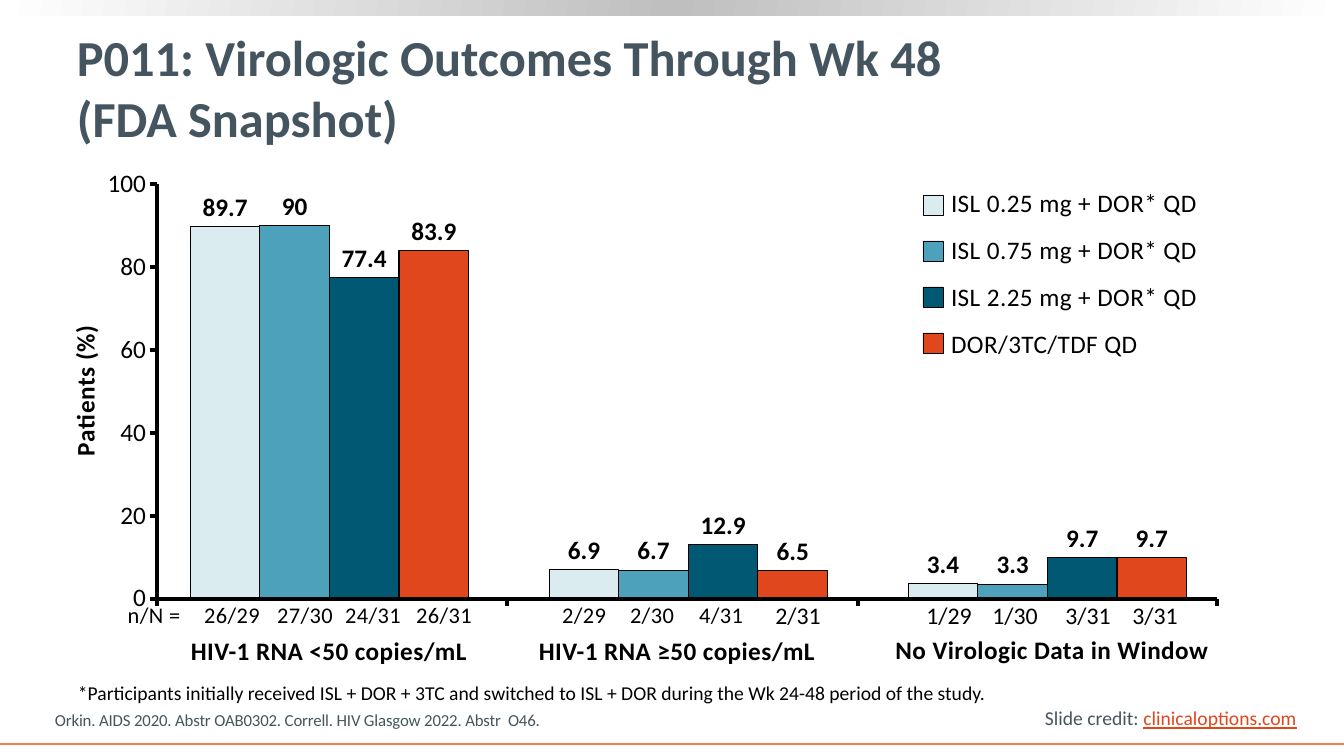
from copy import deepcopy

from lxml import etree
from pptx import Presentation
from pptx import util as u
from pptx.chart import data as chart_data
from pptx.dml import color
from pptx.enum import chart as chart_enum
from pptx.enum import shapes, text
from pptx.oxml import ns

PX = 9071
FONT = "Calibri"
BLACK, SLATE, ORANGE = "000000", "455560", "E1471D"
LEFT, CENTER = text.PP_ALIGN.LEFT, text.PP_ALIGN.CENTER
hex_color = color.RGBColor.from_string


def add_span(para, words, size, ink=BLACK, bold=False, spacing=0):
    span = para.add_run()
    span.text = words
    span.font.name = FONT
    span.font.size = u.Pt(size)
    span.font.bold = bold
    span.font.color.rgb = hex_color(ink)
    if spacing:
        span._r.get_or_add_rPr().set("spc", str(spacing))
    return span


def add_box(left, top, width, height, align=LEFT, inset=True):
    box = page.shapes.add_textbox(left * PX, top * PX, width * PX, height * PX)
    frame = box.text_frame
    frame.word_wrap = True
    if not inset:
        frame.margin_left = frame.margin_right = frame.margin_top = frame.margin_bottom = 0
    frame.paragraphs[0].alignment = align
    return frame


deck = Presentation()
deck.slide_width, deck.slide_height = 1344 * PX, 756 * PX
page = deck.slides.add_slide(deck.slide_layouts[6])

band = page.shapes.add_shape(shapes.MSO_SHAPE.RECTANGLE, 0, 0, 1344 * PX, 16 * PX)
band.shadow.inherit = False
band.line.fill.background()
band.fill.gradient()
band.fill.gradient_angle = 170
stop_list = band._element.spPr.find(".//" + ns.qn("a:gsLst"))
stop_list.append(deepcopy(stop_list[0]))
for stop, position, tone in zip(band.fill.gradient_stops, (0, 0.5, 1), ("FFFFFF", "BFBFBF", "FFFFFF")):
    stop.position = position
    stop.color.rgb = hex_color(tone)

outcomes = chart_data.CategoryChartData()
outcomes.categories = ["HIV-1 RNA <50 copies/mL", "HIV-1 RNA ≥50 copies/mL", "No Virologic Data in Window"]
arms = [
    ("ISL 0.25 mg + DOR* QD", "DBECF1", (89.7, 6.9, 3.4)),
    ("ISL 0.75 mg + DOR* QD", "4DA1BB", (90, 6.7, 3.3)),
    ("ISL 2.25 mg + DOR* QD", "015873", (77.4, 12.9, 9.7)),
    ("DOR/3TC/TDF QD", ORANGE, (83.9, 6.5, 9.7)),
]
for name, tone, values in arms:
    outcomes.add_series(name, values)

chart_left, chart_top, chart_width, chart_height = 63, 160, 1180, 460
chart = page.shapes.add_chart(
    chart_enum.XL_CHART_TYPE.COLUMN_CLUSTERED,
    chart_left * PX, chart_top * PX, chart_width * PX, chart_height * PX, outcomes,
).chart
chart.has_legend = False
chart.has_title = False
chart.font.name = FONT
chart.font.size = u.Pt(18)
chart.font.color.rgb = hex_color(BLACK)

plot = chart.plots[0]
plot.vary_by_categories = False
plot.gap_width = 116
plot.overlap = 0
plot.has_data_labels = True
labels = plot.data_labels
labels.show_value = True
labels.position = chart_enum.XL_LABEL_POSITION.OUTSIDE_END
labels.number_format = "General"
labels.number_format_is_linked = False
labels.font.name = FONT
labels.font.size = u.Pt(18)
labels.font.bold = True
labels.font.color.rgb = hex_color(BLACK)
for series, (name, tone, values) in zip(plot.series, arms):
    series.format.fill.solid()
    series.format.fill.fore_color.rgb = hex_color(tone)
    series.format.line.color.rgb = hex_color(BLACK)
    series.format.line.width = u.Pt(0.75)

for axis in (chart.category_axis, chart.value_axis):
    axis.has_major_gridlines = False
    axis.major_tick_mark = chart_enum.XL_TICK_MARK.NONE
    axis.minor_tick_mark = chart_enum.XL_TICK_MARK.NONE
    axis.format.line.fill.background()
chart.category_axis.tick_label_position = chart_enum.XL_TICK_LABEL_POSITION.NONE
percent_axis = chart.value_axis
percent_axis.minimum_scale, percent_axis.maximum_scale = 0, 100
percent_axis.major_unit = 20
percent_axis.tick_labels.number_format = "0"
percent_axis.tick_labels.number_format_is_linked = False
axis_title = percent_axis.axis_title.text_frame
add_span(axis_title.paragraphs[0], "Patients (%)", 18, bold=True, spacing=30)
axis_title._txBody.bodyPr.set("rot", "-5400000")
axis_title._txBody.bodyPr.set("vert", "horz")

plot_area = chart.element.find(".//" + ns.qn("c:plotArea"))
for unused in plot_area.findall(ns.qn("c:layout")):
    plot_area.remove(unused)
layout = etree.Element(ns.qn("c:layout"))
plot_area.insert(0, layout)
manual = etree.SubElement(layout, ns.qn("c:manualLayout"))
for tag, value in (
    ("layoutTarget", "inner"), ("xMode", "edge"), ("yMode", "edge"),
    ("x", (150 - chart_left) / chart_width), ("y", (184 - chart_top) / chart_height),
    ("w", 1077 / chart_width), ("h", 414 / chart_height),
):
    etree.SubElement(manual, ns.qn("c:" + tag)).set("val", str(value))

axis_x, base_y = 157, 599
lines = [
    (0, 744, 1344, 744, "F47D55", 1.5),
    (axis_x, base_y, 1217, base_y, BLACK, 2.25),
    (axis_x, base_y, axis_x, 184, BLACK, 2.25),
]
lines += [(150, base_y - 83 * step, axis_x, base_y - 83 * step, BLACK, 2.25) for step in range(6)]
lines += [(tick_x, base_y, tick_x, 606, BLACK, 2.25) for tick_x in (axis_x, 507, 858, 1217)]
for start_x, start_y, end_x, end_y, tone, weight in lines:
    line = page.shapes.add_connector(
        shapes.MSO_CONNECTOR.STRAIGHT, start_x * PX, start_y * PX, end_x * PX, end_y * PX)
    line.line.color.rgb = hex_color(tone)
    line.line.width = u.Pt(weight)
    etree.SubElement(line._element.spPr, ns.qn("a:effectLst"))

title = add_box(67, 26, 1199, 122)
title.vertical_anchor = text.MSO_ANCHOR.MIDDLE
heading = title.paragraphs[0]
add_span(heading, "P011: Virologic Outcomes Through Wk 48 ", 36, SLATE, True)
heading.add_line_break()
add_span(heading, "(FDA Snapshot)", 36, SLATE, True)

for center, top, category in zip((329, 677, 1052), (635, 635, 634), outcomes.categories):
    group = add_box(center - 170, top, 340, 30, CENTER, False)
    add_span(group.paragraphs[0], category.label, 18, bold=True, spacing=30)

counts = [
    (154, "n/N ="), (232, "26/29"), (305, "27/30"), (373, "24/31"), (444, "26/31"),
    (584, "2/29"), (652, "2/30"), (721, "4/31"), (798, "2/31"),
    (949, "1/29"), (1015, "1/30"), (1088, "3/31"), (1155, "3/31"),
]
for order, (center, count) in enumerate(counts):
    size, spacing = (16, 30) if order < 8 else (17, 0)
    cell = add_box(center - 32, 601, 64, 28, CENTER, False)
    add_span(cell.paragraphs[0], count, size, spacing=spacing)

legend = add_box(951, 187, 365, 173, inset=False)
for row, (name, tone, values) in enumerate(arms):
    para = legend.paragraphs[0] if row == 0 else legend.add_paragraph()
    para.space_after = u.Pt(12)
    add_span(para, name, 18, spacing=30)
    key = page.shapes.add_shape(
        shapes.MSO_SHAPE.RECTANGLE, 923 * PX, (195 + 46 * row) * PX, 20 * PX, 20 * PX)
    key.shadow.inherit = False
    key.fill.solid()
    key.fill.fore_color.rgb = hex_color(tone)
    key.line.color.rgb = hex_color(BLACK)
    key.line.width = u.Pt(0.5)

footnote = add_box(68, 676, 1121, 34)
add_span(footnote.paragraphs[0], "*Participants initially received ISL + DOR + 3TC and switched to ISL + DOR during the Wk 24-48 period of the study.", 14)
citation = add_box(45, 705, 866, 30)
citation.vertical_anchor = text.MSO_ANCHOR.BOTTOM
add_span(citation.paragraphs[0], "Orkin. AIDS 2020. Abstr OAB0302. Correll. HIV Glasgow 2022. Abstr  O46.", 12, SLATE, spacing=-10)
credit = add_box(1035, 701, 274, 34)
credit.word_wrap = False
add_span(credit.paragraphs[0], "Slide credit: ", 14, SLATE)
add_span(credit.paragraphs[0], "clinicaloptions.com", 14, ORANGE).font.underline = True

deck.save("out.pptx")
